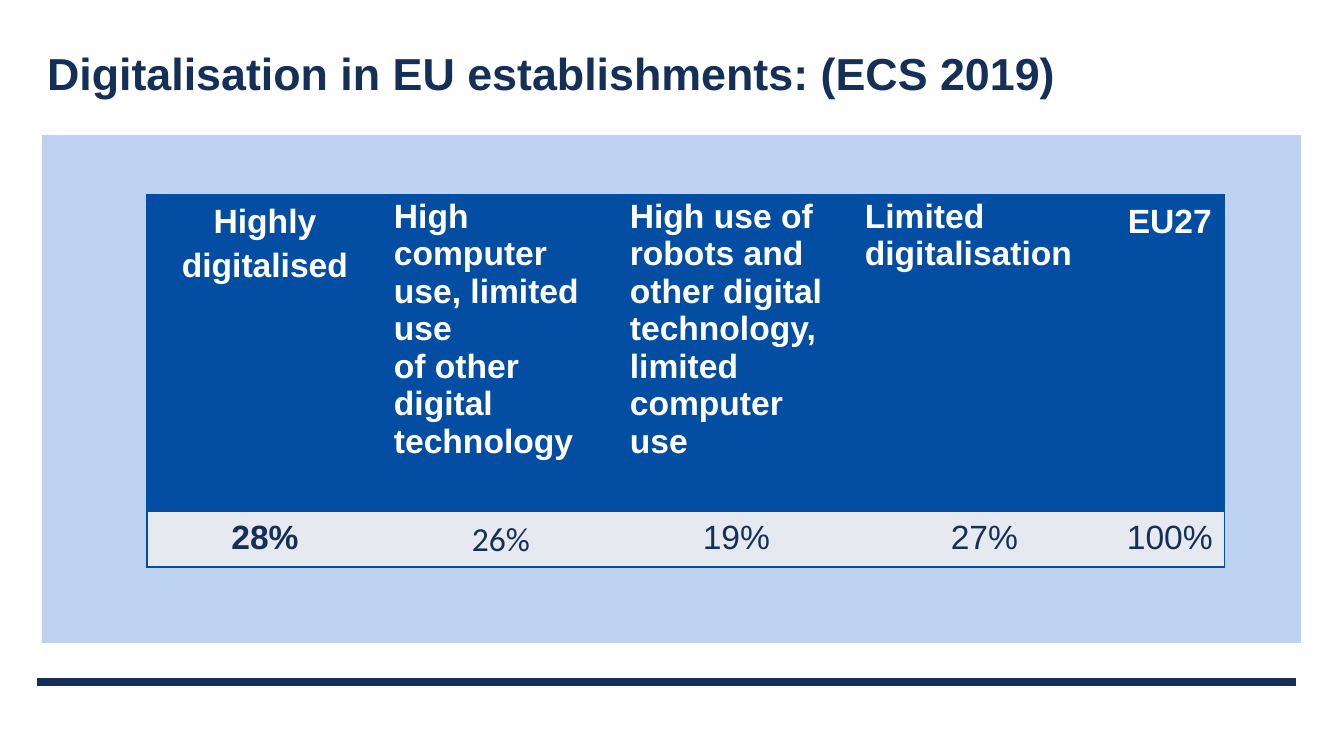
from dataclasses import dataclass

from lxml import etree
from pptx import Presentation
from pptx.dml.color import RGBColor
from pptx.enum.shapes import MSO_CONNECTOR, MSO_SHAPE
from pptx.enum.text import MSO_ANCHOR, MSO_AUTO_SIZE, PP_ALIGN
from pptx.oxml.ns import qn
from pptx.slide import Slide
from pptx.table import _Cell
from pptx.text.text import TextFrame
from pptx.util import Pt

LEFT, CENTER = PP_ALIGN.LEFT, PP_ALIGN.CENTER
MIDDLE, NO_FIT = MSO_ANCHOR.MIDDLE, MSO_AUTO_SIZE.NONE
RECT, STRAIGHT = MSO_SHAPE.RECTANGLE, MSO_CONNECTOR.STRAIGHT
TITLE_ONLY = 5
NO_GRID = "{2D5ABB26-0587-4C30-8999-92F81FD0307C}"
SCALE = 914400 / 100.8


@dataclass(frozen=True)
class Theme:
    navy: str = "143058"
    blue: str = "034EA2"
    panel: str = "BDD2F0"
    pale: str = "E7E9F0"
    white: str = "FFFFFF"
    font: str = "Arial"
    alt: str = "Calibri"
    title: int = 32
    body: int = 24
    rule: int = 6
    edge: int = 1


@dataclass(frozen=True)
class Column:
    width: int
    head: str
    share: str
    centred: bool = False
    bold: bool = False
    font: str = "Arial"


THEME = Theme()
HEAD_H, SHARE_H = 316, 56
COLUMNS = [
    Column(236, "Highly digitalised", "28%", centred=True, bold=True),
    Column(236, "High computer\nuse, limited use\nof other digital\ntechnology", "26%",
           font=THEME.alt),
    Column(235, "High use of robots and\nother digital\ntechnology, limited\ncomputer use", "19%"),
    Column(261, "Limited\ndigitalisation", "27%"),
    Column(110, "EU27", "100%", centred=True),
]


def px(count: int) -> int:
    return round(count * SCALE)


def rgb(code: str) -> RGBColor:
    return RGBColor.from_string(code)


def write(frame: TextFrame, text: str, *, size: int, color: str, bold: bool = False,
          font: str = THEME.font, align: PP_ALIGN = LEFT,
          spacing: float = 1.0, after: int = 0) -> None:
    """Fill a frame with one paragraph per line of text."""
    frame.word_wrap = True
    frame.text = text
    for para in frame.paragraphs:
        para.alignment = align
        para.line_spacing = spacing
        para.space_before = Pt(0)
        para.space_after = Pt(after)
        para.font.size = Pt(size)
        para.font.name = font
        para.font.bold = bold
        para.font.color.rgb = rgb(color)


def edge(cell: _Cell, sides: str) -> None:
    """Draw cell borders; sides holds letters from L, R, T, B in that order."""
    props = cell._tc.get_or_add_tcPr()
    for spot, side in enumerate(sides):
        line = etree.Element(qn(f"a:ln{side}"), w=str(Pt(THEME.edge)))
        fill = etree.SubElement(line, qn("a:solidFill"))
        etree.SubElement(fill, qn("a:srgbClr"), val=THEME.blue)
        props.insert(spot, line)


def style(cell: _Cell, fill: str, sides: str) -> None:
    cell.margin_left = cell.margin_right = px(11)
    cell.margin_top = cell.margin_bottom = px(3)
    cell.fill.solid()
    cell.fill.fore_color.rgb = rgb(fill)
    edge(cell, sides)


def add_title(slide: Slide) -> None:
    title = slide.shapes.title
    title.left, title.top, title.width, title.height = map(px, (37, 30, 1259, 86))
    frame = title.text_frame
    frame.auto_size = NO_FIT
    frame.vertical_anchor = MIDDLE
    write(frame, "Digitalisation in EU establishments: (ECS 2019)",
          size=THEME.title, color=THEME.navy, bold=True)


def add_rule(slide: Slide) -> None:
    rule = slide.shapes.add_connector(STRAIGHT, px(37), px(682), px(1296), px(682))
    rule.line.color.rgb = rgb(THEME.navy)
    rule.line.width = Pt(THEME.rule)
    etree.SubElement(rule._element.spPr, qn("a:effectLst"))


def add_panel(slide: Slide) -> None:
    panel = slide.shapes.add_shape(RECT, px(42), px(135), px(1259), px(508))
    panel.shadow.inherit = False
    panel.fill.solid()
    panel.fill.fore_color.rgb = rgb(THEME.panel)
    panel.line.fill.background()


def add_shares(slide: Slide) -> None:
    width = sum(col.width for col in COLUMNS)
    table = slide.shapes.add_table(2, len(COLUMNS), px(147), px(195),
                                   px(width), px(HEAD_H + SHARE_H)).table
    table._tbl.tblPr.find(qn("a:tableStyleId")).text = NO_GRID
    table.horz_banding = False
    for row, height in zip(table.rows, (HEAD_H, SHARE_H)):
        row.height = px(height)
    last = len(COLUMNS) - 1
    for spot, col in enumerate(COLUMNS):
        table.columns[spot].width = px(col.width)
        sides = ("L" if spot == 0 else "R" if spot == last else "") + "TB"
        head, share = table.cell(0, spot), table.cell(1, spot)
        style(head, THEME.blue, sides)
        style(share, THEME.pale, sides)
        loose = {"align": CENTER, "spacing": 1.15, "after": 5}
        write(head.text_frame, col.head, size=THEME.body, color=THEME.white,
              bold=True, **(loose if col.centred else {}))
        write(share.text_frame, col.share, size=THEME.body, color=THEME.navy,
              bold=col.bold, font=col.font, **loose)


def main() -> None:
    deck = Presentation()
    deck.slide_width, deck.slide_height = px(1344), px(756)
    slide = deck.slides.add_slide(deck.slide_layouts[TITLE_ONLY])
    add_rule(slide)
    add_panel(slide)
    add_title(slide)
    add_shares(slide)
    deck.save("out.pptx")


if __name__ == "__main__":
    main()
